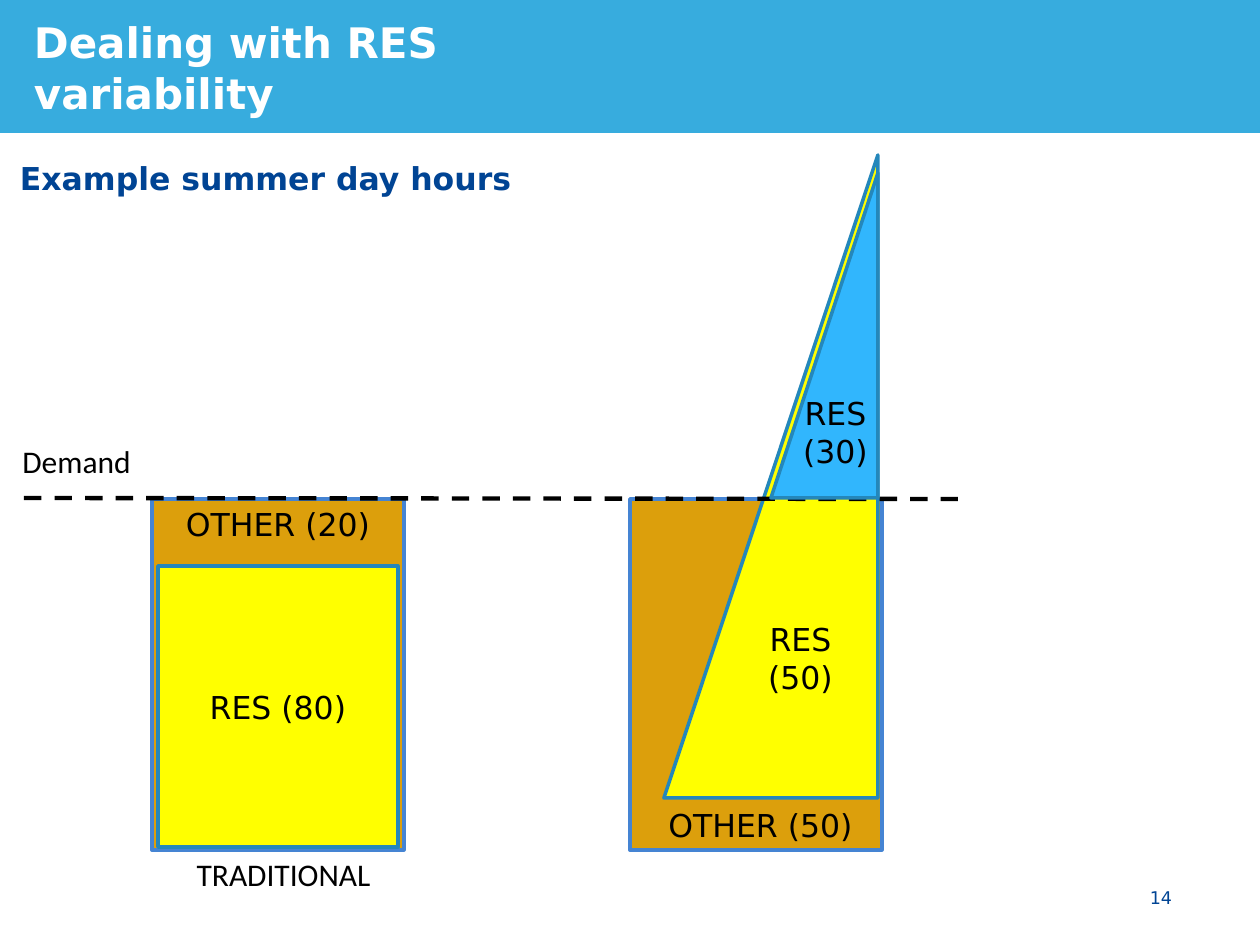
import pptx
import pptx.dml.color
import pptx.enum.dml
import pptx.enum.shapes
import pptx.enum.text
import pptx.oxml
import pptx.util

RGBColor = pptx.dml.color.RGBColor
SHAPE = pptx.enum.shapes.MSO_SHAPE
ALIGN = pptx.enum.text.PP_ALIGN
ANCHOR = pptx.enum.text.MSO_ANCHOR

SKY = RGBColor(0x37, 0xAC, 0xDE)
BLUE = RGBColor(0x31, 0xB6, 0xFD)
AMBER = RGBColor(0xDC, 0x9F, 0x0C)
YELLOW = RGBColor(0xFF, 0xFF, 0x00)
AMBER_EDGE = RGBColor(0x45, 0x84, 0xD3)
RES_EDGE = RGBColor(0x24, 0x87, 0xBB)
NAVY = RGBColor(0x00, 0x44, 0x94)
BLACK = RGBColor(0x00, 0x00, 0x00)
WHITE = RGBColor(0xFF, 0xFF, 0xFF)
SANS = "DejaVu Sans"
LABEL = "Calibri"

EMU_PER_PX = 914400 / 126
DEMAND_Y = 498

BACK_SHAPES = [
    (SHAPE.RECTANGLE, (0, 0, 1260, 132), SKY, SKY, 0.75, "", ANCHOR.MIDDLE),
    (SHAPE.RECTANGLE, (630, 499, 252, 351), AMBER, AMBER_EDGE, 2, "", ANCHOR.MIDDLE),
    (SHAPE.RIGHT_TRIANGLE, (664, 155, 214, 643), YELLOW, RES_EDGE, 2, "", ANCHOR.MIDDLE),
    (SHAPE.RECTANGLE, (152, 499, 252, 351), AMBER, AMBER_EDGE, 2, "OTHER (20)", ANCHOR.TOP),
    (SHAPE.RECTANGLE, (158, 566, 240, 281), YELLOW, RES_EDGE, 2, "RES (80)", ANCHOR.MIDDLE),
]
DEMAND_LINE = (24, DEMAND_Y, 958, DEMAND_Y + 1)
FRONT_SHAPES = [
    (SHAPE.RIGHT_TRIANGLE, (771, 173, 107, 325), BLUE, RES_EDGE, 2, "", ANCHOR.MIDDLE),
]

PADDED = (0.1, 0.05)
FLUSH = (0, 0)
TEXTS = [
    ("Dealing with RES variability", (34, 17, 478, 102), SANS, 24, WHITE, True, ALIGN.LEFT, FLUSH),
    ("Example summer day hours", (20, 159, 580, 38), SANS, 18, NAVY, True, ALIGN.LEFT, FLUSH),
    ("Demand", (10, 436, 289, 50), LABEL, 18, BLACK, False, ALIGN.LEFT, PADDED),
    ("TRADITIONAL", (105, 849, 357, 50), LABEL, 18, BLACK, False, ALIGN.CENTER, PADDED),
    ("RES (30)", (766, 388, 139, 89), SANS, 18, BLACK, False, ALIGN.CENTER, PADDED),
    ("RES (50)", (731, 614, 139, 89), SANS, 18, BLACK, False, ALIGN.CENTER, PADDED),
    ("OTHER (50)", (644, 800, 233, 50), SANS, 18, BLACK, False, ALIGN.CENTER, PADDED),
    ("14", (878, 887, 294, 20), SANS, 10, NAVY, False, ALIGN.RIGHT, FLUSH),
]


def emu(*lengths):
    return [round(length * EMU_PER_PX) for length in lengths]


def write(shape, text, font_name, size, color, bold, alignment):
    shape.text_frame.word_wrap = True
    paragraph = shape.text_frame.paragraphs[0]
    paragraph.text = text
    paragraph.alignment = alignment
    paragraph.font.name = font_name
    paragraph.font.size = pptx.util.Pt(size)
    paragraph.font.color.rgb = color
    paragraph.font.bold = bold


def add_shape(slide, kind, box, fill, edge, width, text, anchor):
    shape = slide.shapes.add_shape(kind, *emu(*box))
    shape.shadow.inherit = False
    shape.fill.solid()
    shape.fill.fore_color.rgb = fill
    shape.line.color.rgb = edge
    shape.line.width = pptx.util.Pt(width)
    if kind == SHAPE.RIGHT_TRIANGLE:
        shape._element.spPr.xfrm.set("flipH", "1")
    if text:
        shape.text_frame.vertical_anchor = anchor
        write(shape, text, SANS, 18, BLACK, False, ALIGN.CENTER)


def add_demand_line(slide):
    line = slide.shapes.add_connector(
        pptx.enum.shapes.MSO_CONNECTOR.STRAIGHT, *emu(*DEMAND_LINE))
    line.line.color.rgb = BLACK
    line.line.width = pptx.util.Pt(2.5)
    line.line.dash_style = pptx.enum.dml.MSO_LINE.DASH
    line._element.spPr.append(pptx.oxml.parse_xml(
        '<a:effectLst xmlns:a="http://schemas.openxmlformats.org/drawingml/2006/main"/>'))


def add_text(slide, text, box, font_name, size, color, bold, alignment, padding):
    shape = slide.shapes.add_textbox(*emu(*box))
    frame = shape.text_frame
    frame.margin_left = frame.margin_right = pptx.util.Inches(padding[0])
    frame.margin_top = frame.margin_bottom = pptx.util.Inches(padding[1])
    write(shape, text, font_name, size, color, bold, alignment)


def main():
    presentation = pptx.Presentation()
    presentation.slide_width, presentation.slide_height = emu(1260, 945)
    slide = presentation.slides.add_slide(presentation.slide_layouts[6])
    for item in BACK_SHAPES:
        add_shape(slide, *item)
    add_demand_line(slide)
    for item in FRONT_SHAPES:
        add_shape(slide, *item)
    for item in TEXTS:
        add_text(slide, *item)
    presentation.save("out.pptx")


if __name__ == "__main__":
    main()
